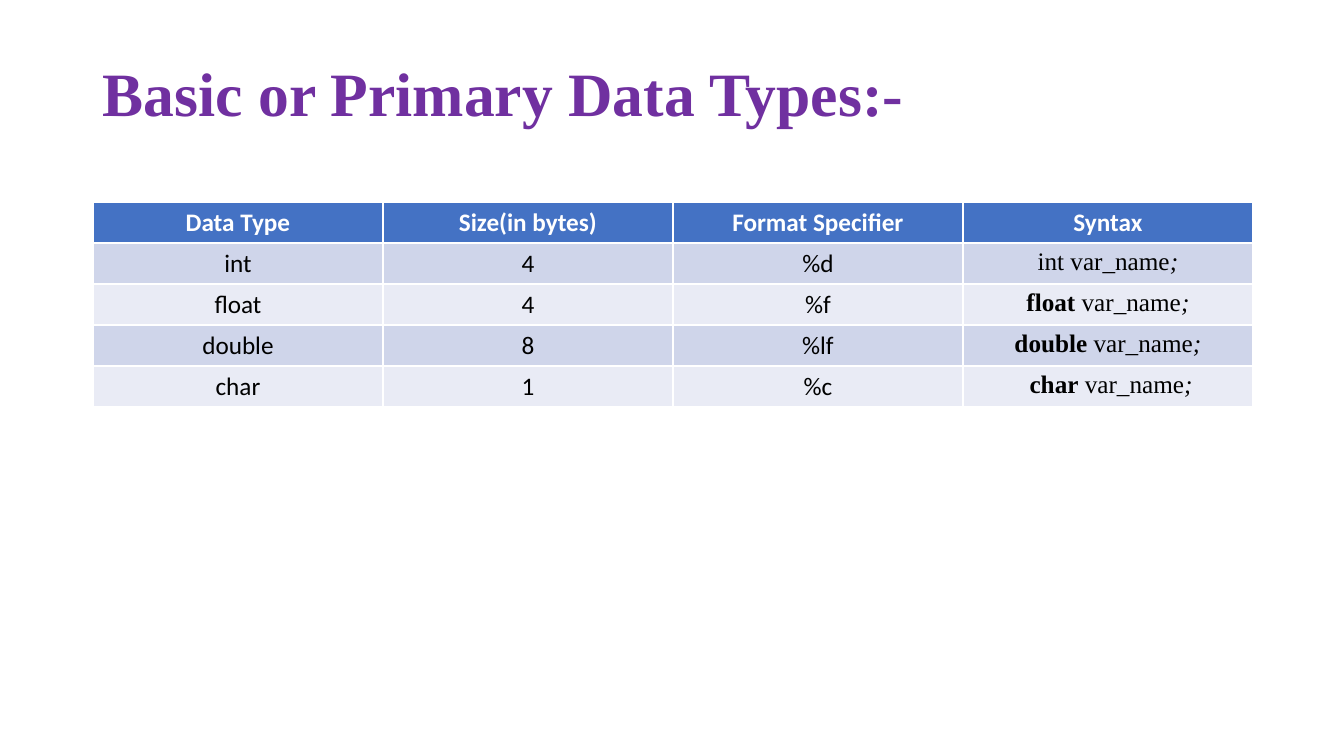
"""Build the slide on basic data types and save it as out.pptx."""
from pptx import Presentation, util as u
from pptx.dml.color import RGBColor
from pptx.enum import text

SCALE = 12192000 / 1344
HUES = {"title": "7030A0", "head": "4472C4", "odd": "CFD5EA",
        "even": "E9EBF5", "white": "FFFFFF", "black": "000000"}
SERIF, SANS = "Times New Roman", "Calibri"


def px(num):
    """Turn pixels into EMU."""
    return u.Emu(round(num * SCALE))


def write(para, words, hue, **style):
    """Add one run with its colour and font values."""
    run = para.add_run()
    run.text = words
    run.font.color.rgb = RGBColor.from_string(HUES[hue])
    for key, value in style.items():
        setattr(run.font, key, value)


deck = Presentation()
deck.slide_width, deck.slide_height = px(1344), px(756)
slide = deck.slides.add_slide(deck.slide_layouts[6])

frame = slide.shapes.add_textbox(px(93), px(40), px(1159), px(114)).text_frame
frame.word_wrap = True
frame.vertical_anchor = text.MSO_ANCHOR.MIDDLE
title = frame.paragraphs[0]
title.line_spacing = 0.9
write(title, "Basic or Primary Data Types:-", "title",
      name=SERIF, size=u.Pt(44), bold=True)

heads = ["Data Type", "Size(in bytes)", "Format Specifier", "Syntax"]
types = [
    ("int", "4", "%d", [("int var_name", {}), (";", {"italic": True})]),
    ("float", "4", "%f", [("float", {"bold": True}), (" var_name", {}),
                          (";", {"italic": True})]),
    ("double", "8", "%lf", [("double ", {"bold": True}), ("var_name", {}),
                            (";", {"italic": True})]),
    ("char", "1", "%c", [(" ", {}), ("char", {"bold": True}),
                         (" var_name", {}), (";", {"italic": True})]),
]
rows = [heads, *types]
grid = slide.shapes.add_table(len(rows), len(heads), px(93), px(202),
                              px(1160), px(205)).table
for col in grid.columns:
    col.width = px(290)

for r, row in enumerate(rows):
    grid.rows[r].height = px(41)
    back = "head" if r == 0 else "odd" if r % 2 else "even"
    for c, item in enumerate(row):
        cell = grid.cell(r, c)
        cell.fill.solid()
        cell.fill.fore_color.rgb = RGBColor.from_string(HUES[back])
        para = cell.text_frame.paragraphs[0]
        para.alignment = text.PP_ALIGN.CENTER
        plain = isinstance(item, str)
        base = {"name": SANS if plain else SERIF, "size": u.Pt(18),
                "bold": r == 0, "italic": False}
        for words, style in [(item, {})] if plain else item:
            write(para, words, "black" if r else "white", **{**base, **style})

deck.save("out.pptx")
